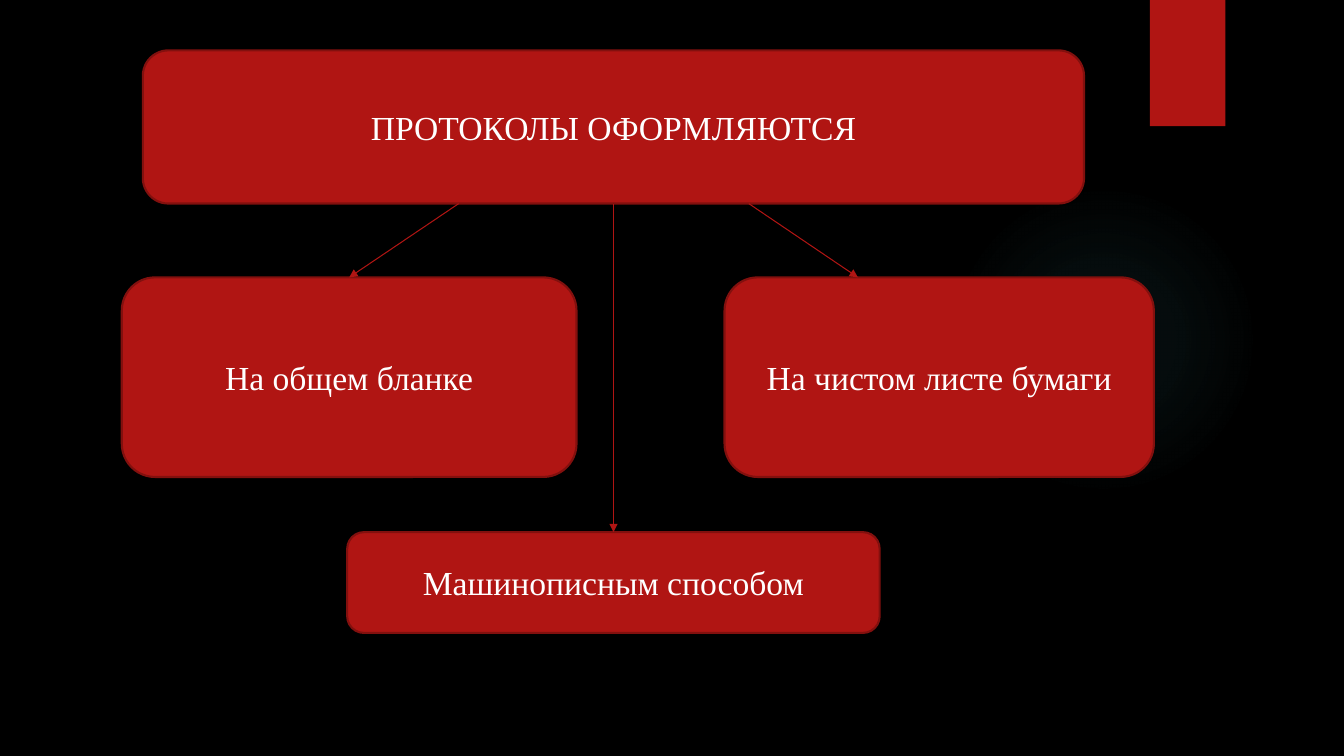
"""Build a slide showing the ways in which protocols are drawn up."""
from lxml.etree import SubElement as Sub
from pptx import Presentation
from pptx.dml.color import RGBColor
from pptx.enum.shapes import MSO_CONNECTOR as Line, MSO_SHAPE as Kind
from pptx.enum.text import MSO_ANCHOR as Anchor, PP_ALIGN as Align
from pptx.oxml import parse_xml
from pptx.oxml.ns import nsdecls, qn
from pptx.util import Cm, Pt

BLACK = RGBColor(0x00, 0x00, 0x00)
WHITE = RGBColor(0xFF, 0xFF, 0xFF)
RED = RGBColor(0xB0, 0x15, 0x13)
DARK = RGBColor(0x82, 0x10, 0x0E)
TEAL = RGBColor(0x50, 0xB9, 0xC1)

SIZE = (33.87, 19.05)
GLOW = (23.9, 4.65, 7.82, 7.82)
FADE = [(0, 7), (36, 6), (69, 0)]
TAB = (28.98, 0, 1.9, 3.18)
BOXES = {
    "title": ("ПРОТОКОЛЫ ОФОРМЛЯЮТСЯ", (3.6, 1.27, 23.72, 3.86)),
    "form": ("На общем бланке", (3.07, 6.99, 11.46, 5.03)),
    "sheet": ("На чистом листе бумаги", (18.26, 6.99, 10.82, 5.03)),
    "typed": ("Машинописным способом", (8.75, 13.41, 13.42, 2.54)),
}
TOP, BASE = 5.13, 6.99
ARROWS = [
    ((11.56, TOP), (8.8, BASE), None, "form"),
    ((18.87, TOP), (21.62, BASE), None, None),
    ((15.46, TOP), (15.46, 13.41), "title", "typed"),
]
FONT = {"name": "Times New Roman", "size": Pt(24)}


def add_shape(slide, kind, place, fill=RED):
    shape = slide.shapes.add_shape(kind, *map(Cm, place))
    shape.shadow.inherit = False
    shape.fill.solid()
    shape.fill.fore_color.rgb = fill
    shape.line.fill.background()
    return shape


def add_glow(slide):
    glow = add_shape(slide, Kind.OVAL, GLOW, TEAL)
    stops = "".join(
        f'<a:gs pos="{pos * 1000}"><a:srgbClr val="{TEAL}">'
        f'<a:alpha val="{alpha * 1000}"/></a:srgbClr></a:gs>'
        for pos, alpha in FADE)
    grad = parse_xml(
        f'<a:gradFill {nsdecls("a")}><a:gsLst>{stops}</a:gsLst>'
        '<a:path path="circle"><a:fillToRect l="50000" t="50000" '
        'r="50000" b="50000"/></a:path></a:gradFill>')
    props = glow._element.spPr
    props.replace(props.find(qn("a:solidFill")), grad)


def add_box(slide, text, place):
    box = add_shape(slide, Kind.ROUNDED_RECTANGLE, place)
    box.line.color.rgb = DARK
    box.line.width = Pt(1.5)
    frame = box.text_frame
    frame.word_wrap = True
    frame.vertical_anchor = Anchor.MIDDLE
    para = frame.paragraphs[0]
    para.alignment = Align.CENTER
    run = para.add_run()
    run.text = text
    for name, value in FONT.items():
        setattr(run.font, name, value)
    run.font.color.rgb = WHITE
    return box


def add_arrow(slide, start, end, source, target):
    arrow = slide.shapes.add_connector(Line.STRAIGHT, *map(Cm, start + end))
    if source:
        arrow.begin_connect(source, 2)
    if target:
        arrow.end_connect(target, 0)
    arrow.line.color.rgb = RED
    arrow.line.width = Pt(0.75)
    Sub(arrow.line._get_or_add_ln(), qn("a:tailEnd"), type="triangle")
    Sub(arrow._element.spPr, qn("a:effectLst"))


def main():
    deck = Presentation()
    deck.slide_width, deck.slide_height = map(Cm, SIZE)
    slide = deck.slides.add_slide(deck.slide_layouts[6])
    back = slide.background.fill
    back.solid()
    back.fore_color.rgb = BLACK
    add_glow(slide)
    add_shape(slide, Kind.RECTANGLE, TAB)
    boxes = {key: add_box(slide, *item) for key, item in BOXES.items()}
    for start, end, source, target in ARROWS:
        add_arrow(slide, start, end, boxes.get(source), boxes.get(target))
    deck.save("out.pptx")


if __name__ == "__main__":
    main()
